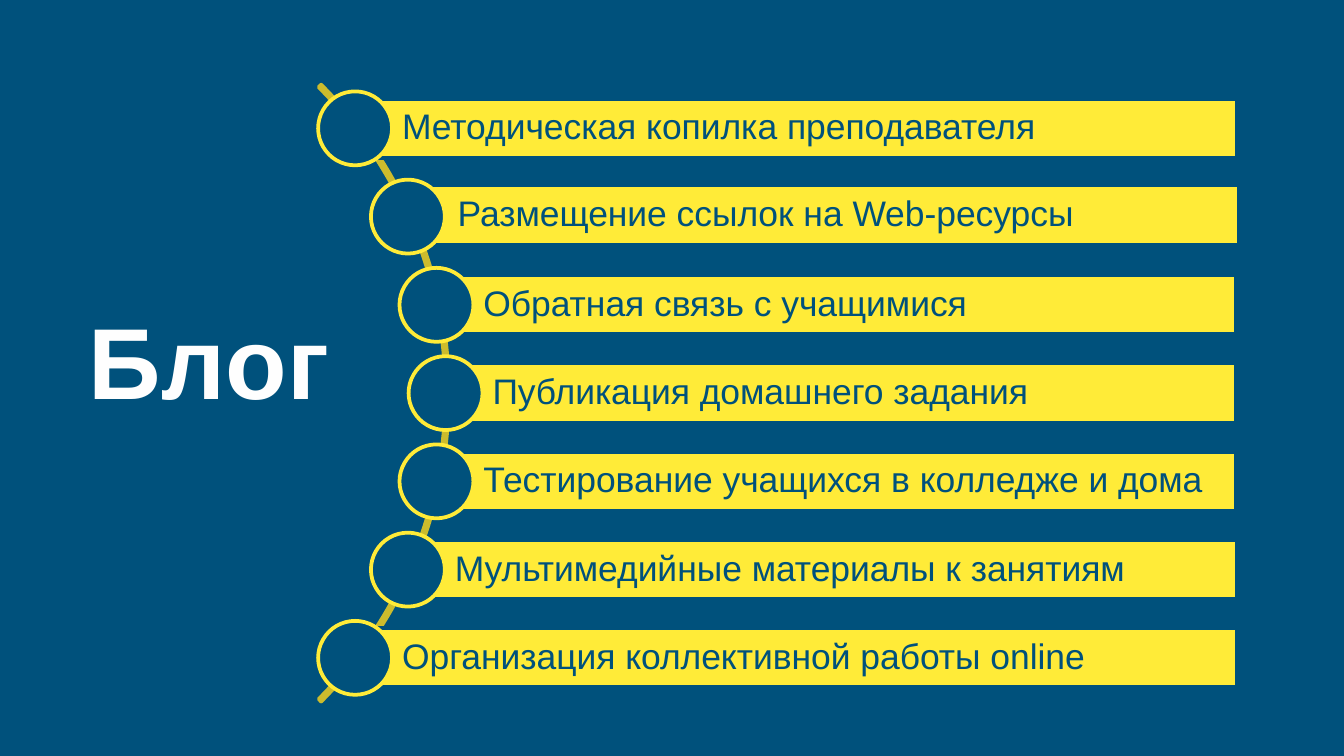
from math import sqrt

from lxml import etree
from pptx import Presentation
from pptx.dml.color import RGBColor
from pptx.enum.shapes import MSO_SHAPE as SHAPE
from pptx.enum.text import MSO_ANCHOR as ANCHOR, MSO_AUTO_SIZE as AUTO, PP_ALIGN as ALIGN
from pptx.oxml.ns import qn
from pptx.util import Inches, Pt

# Content
TITLE = "Блог"
TOPICS = [
    "Методическая копилка преподавателя",
    "Размещение ссылок на Web-ресурсы",
    "Обратная связь с учащимися",
    "Публикация домашнего задания",
    "Тестирование учащихся в колледже и дома",
    "Мультимедийные материалы к занятиям",
    "Организация коллективной работы online",
]
NUDGES = {1: (0.02, -0.01)}  # bars set slightly off the rule: index -> (dx, dy)

# Style
FONT = "Arial"
NAVY = RGBColor(0x00, 0x51, 0x7C)
YELLOW = RGBColor(0xFF, 0xEB, 0x38)
OLIVE = RGBColor(0xCC, 0xBC, 0x2D)
WHITE = RGBColor(0xFE, 0xFE, 0xFE)

# Geometry in inches
SLIDE_W = 10
SLIDE_H = SLIDE_W * 9 / 16
ARC_LEFT, ARC_TOP, ARC_SIZE = -3.15, -0.32, 6.49
ARC_X, ARC_Y = ARC_LEFT + ARC_SIZE / 2, ARC_TOP + ARC_SIZE / 2
TRACK_R = 3.22  # circle centres lie on this radius
PITCH = 3.94 / (len(TOPICS) - 1)
CIRCLE = 0.55
BAR_H, BAR_RIGHT = 0.44, 9.2


def add_shape(s, kind, x, y, w, h, fill, line):
    sp = s.shapes.add_shape(kind, Inches(x), Inches(y), Inches(w), Inches(h))
    sp.shadow.inherit = False
    if fill is None:
        sp.fill.background()
    else:
        sp.fill.solid()
        sp.fill.fore_color.rgb = fill
    sp.line.color.rgb = line
    sp.line.width = Pt(2)
    return sp


def format_run(r, size, color):
    r.font.name = FONT
    r.font.size = Pt(size)
    r.font.color.rgb = color


def add_title(s):
    sp = s.shapes.title
    sp.left, sp.top, sp.width, sp.height = map(Inches, (0.54, 2.17, 2.03, 1.01))
    tf = sp.text_frame
    tf.text = TITLE
    tf.word_wrap = False
    tf.auto_size = AUTO.SHAPE_TO_FIT_TEXT
    tf.vertical_anchor = ANCHOR.TOP
    p = tf.paragraphs[0]
    p.alignment = ALIGN.CENTER
    r = p.runs[0]
    format_run(r, 54, WHITE)
    r.font.bold = True
    # Letter spacing and thin blue outline
    rPr = r.font._element
    rPr.set("spc", "50")
    ln = etree.Element(qn("a:ln"), w=str(Pt(0.75)))
    fill = etree.SubElement(ln, qn("a:solidFill"))
    etree.SubElement(fill, qn("a:srgbClr"), val="0277BD")
    rPr.insert(0, ln)


def add_bar(s, text, x, y, w):
    sp = add_shape(s, SHAPE.RECTANGLE, x, y, w, BAR_H, YELLOW, NAVY)
    tf = sp.text_frame
    tf.text = text
    tf.word_wrap = True
    tf.vertical_anchor = ANCHOR.MIDDLE
    tf.margin_left = Inches(0.35)
    tf.margin_top = tf.margin_right = tf.margin_bottom = Inches(0.05)
    p = tf.paragraphs[0]
    p.alignment = ALIGN.LEFT
    p.line_spacing = 0.9
    format_run(p.runs[0], 19, NAVY)


prs = Presentation()
prs.slide_width, prs.slide_height = Inches(SLIDE_W), Inches(SLIDE_H)
s = prs.slides.add_slide(prs.slide_layouts[5])
s.background.fill.solid()
s.background.fill.fore_color.rgb = NAVY
add_title(s)

# Arc behind the list
arc = add_shape(s, SHAPE.BLOCK_ARC, ARC_LEFT, ARC_TOP, ARC_SIZE, ARC_SIZE, None, OLIVE)
for i, value in enumerate((189, 27, 0.004)):
    arc.adjustments[i] = value

# Bars, each starting at the centre of its circle on the arc
for i, topic in enumerate(TOPICS):
    dy = (i - (len(TOPICS) - 1) / 2) * PITCH
    x, y = ARC_X + sqrt(TRACK_R ** 2 - dy ** 2), ARC_Y + dy
    nudge_x, nudge_y = NUDGES.get(i, (0, 0))
    add_bar(s, topic, x + nudge_x, y - BAR_H / 2 + nudge_y, BAR_RIGHT - x)
    add_shape(s, SHAPE.OVAL, x - CIRCLE / 2, y - CIRCLE / 2, CIRCLE, CIRCLE, NAVY, YELLOW)

prs.save("out.pptx")
